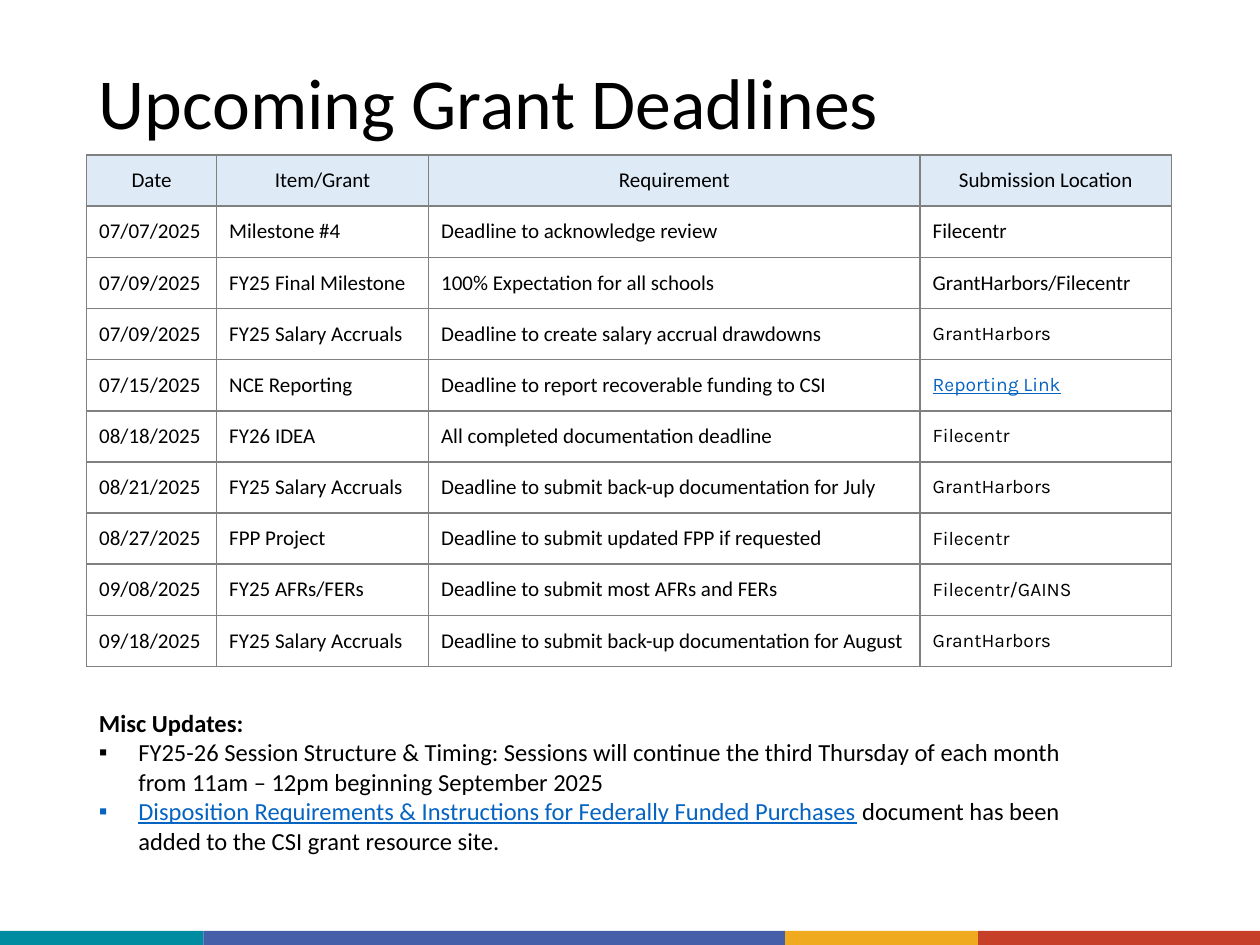
import pptx
import pptx.util
import pptx.dml.color
import pptx.enum.shapes
import pptx.enum.text
import pptx.oxml
import pptx.oxml.ns
from dataclasses import dataclass

Pt = pptx.util.Pt
ALIGN = pptx.enum.text.PP_ALIGN
ANCHOR = pptx.enum.text.MSO_ANCHOR


@dataclass(frozen=True)
class Theme:
    font: str = "Calibri"
    location_font: str = "Karla"
    title_size: float = 41
    table_size: float = 12
    location_size: float = 11
    updates_size: float = 14
    text: str = "000000"
    link: str = "0563C1"
    header_fill: str = "DEEBF7"
    border: str = "808080"
    teal: str = "008CA0"
    blue: str = "455FA9"
    gold: str = "EFAA1F"
    red: str = "C63F28"


THEME = Theme()

HEADINGS = ["Date", "Item/Grant", "Requirement", "Submission Location"]
COLUMN_WIDTHS = [74.3, 121.1, 280.9, 143.6]
ROW_HEIGHT = 29.23
DEADLINES = [
    ("07/07/2025", "Milestone #4", "Deadline to acknowledge review", "Filecentr"),
    ("07/09/2025", "FY25 Final Milestone", "100% Expectation for all schools",
     "GrantHarbors/Filecentr"),
    ("07/09/2025", "FY25 Salary Accruals", "Deadline to create salary accrual drawdowns",
     "GrantHarbors"),
    ("07/15/2025", "NCE Reporting", "Deadline to report recoverable funding to CSI",
     "Reporting Link"),
    ("08/18/2025", "FY26 IDEA", "All completed documentation deadline", "Filecentr"),
    ("08/21/2025", "FY25 Salary Accruals",
     "Deadline to submit back-up documentation for July", "GrantHarbors"),
    ("08/27/2025", "FPP Project", "Deadline to submit updated FPP if requested", "Filecentr"),
    ("09/08/2025", "FY25 AFRs/FERs", "Deadline to submit most AFRs and FERs",
     "Filecentr/GAINS"),
    ("09/18/2025", "FY25 Salary Accruals",
     "Deadline to submit back-up documentation for August", "GrantHarbors"),
]
FIRST_KARLA_ROW = 3

UPDATES = [
    [("FY25-26 Session Structure & Timing: Sessions will continue the third Thursday "
      "of each month from 11am – 12pm beginning September 2025", False)],
    [("Disposition Requirements & Instructions for Federally Funded Purchases", True),
     (" document has been added to the CSI grant resource site.", False)],
]


def rgb(value):
    return pptx.dml.color.RGBColor.from_string(value)


def add_run(paragraph, text, size, font=THEME.font, bold=False, link=False):
    run = paragraph.add_run()
    run.text = text
    run.font.name = font
    run.font.size = Pt(size)
    run.font.bold = bold
    run.font.underline = link
    run.font.color.rgb = rgb(THEME.link if link else THEME.text)


def add_text_frame(slide, left, top, width, height, anchor=ANCHOR.TOP):
    frame = slide.shapes.add_textbox(Pt(left), Pt(top), Pt(width), Pt(height)).text_frame
    frame.word_wrap = True
    frame.vertical_anchor = anchor
    return frame


def add_title(slide):
    frame = add_text_frame(slide, 49.5, 8.7, 621, 104.4, ANCHOR.MIDDLE)
    frame.paragraphs[0].line_spacing = 0.9
    add_run(frame.paragraphs[0], "Upcoming Grant Deadlines", THEME.title_size)


def add_footer_band(slide):
    left = 0
    top = 532
    segments = [(116.2, THEME.teal), (332.4, THEME.blue),
                (110.3, THEME.gold), (161.1, THEME.red)]
    for width, color in segments:
        band = slide.shapes.add_shape(pptx.enum.shapes.MSO_SHAPE.RECTANGLE,
                                      Pt(left), Pt(top), Pt(width), Pt(540 - top))
        band.shadow.inherit = False
        band.fill.solid()
        band.fill.fore_color.rgb = rgb(color)
        band.line.fill.background()
        left += width


def set_borders(cell):
    properties = cell._tc.get_or_add_tcPr()
    for position, side in enumerate(("lnL", "lnR", "lnT", "lnB")):
        properties.insert(position, pptx.oxml.parse_xml(
            f'<a:{side} {pptx.oxml.ns.nsdecls("a")} w="{Pt(1)}"><a:solidFill>'
            f'<a:srgbClr val="{THEME.border}"/></a:solidFill></a:{side}>'))


def fill_cell(cell, text, row, column):
    cell.vertical_anchor = ANCHOR.MIDDLE
    paragraph = cell.text_frame.paragraphs[0]
    if row == 0:
        paragraph.alignment = ALIGN.CENTER
        cell.fill.solid()
        cell.fill.fore_color.rgb = rgb(THEME.header_fill)
    else:
        cell.fill.background()
    set_borders(cell)
    if column == 3 and row >= FIRST_KARLA_ROW:
        add_run(paragraph, text, THEME.location_size, THEME.location_font,
                link=text == "Reporting Link")
    else:
        add_run(paragraph, text, THEME.table_size)


def add_deadline_table(slide):
    rows = [HEADINGS, *DEADLINES]
    table = slide.shapes.add_table(
        len(rows), len(HEADINGS), Pt(49.5), Pt(88.6),
        Pt(sum(COLUMN_WIDTHS)), Pt(ROW_HEIGHT * len(rows))).table
    table.horz_banding = False
    table.first_row = False
    for column, width in zip(table.columns, COLUMN_WIDTHS):
        column.width = Pt(width)
    for r, values in enumerate(rows):
        table.rows[r].height = Pt(ROW_HEIGHT)
        for c, text in enumerate(values):
            fill_cell(table.cell(r, c), text, r, c)


def add_bullet(paragraph):
    properties = paragraph._p.get_or_add_pPr()
    properties.set("marL", str(Pt(22.5)))
    properties.set("indent", str(Pt(-22.5)))
    namespace = pptx.oxml.ns.nsdecls("a")
    properties.append(pptx.oxml.parse_xml(f'<a:buFont {namespace} typeface="Arial"/>'))
    properties.append(pptx.oxml.parse_xml(f'<a:buChar {namespace} char="▪"/>'))


def add_updates(slide):
    frame = add_text_frame(slide, 49.5, 401, 570, 92)
    add_run(frame.paragraphs[0], "Misc Updates:", THEME.updates_size, bold=True)
    for update in UPDATES:
        paragraph = frame.add_paragraph()
        add_bullet(paragraph)
        for text, link in update:
            add_run(paragraph, text, THEME.updates_size, link=link)


def main():
    deck = pptx.Presentation()
    deck.slide_width, deck.slide_height = Pt(720), Pt(540)
    slide = deck.slides.add_slide(deck.slide_layouts[6])
    add_footer_band(slide)
    add_title(slide)
    add_deadline_table(slide)
    add_updates(slide)
    deck.save("out.pptx")


if __name__ == "__main__":
    main()
